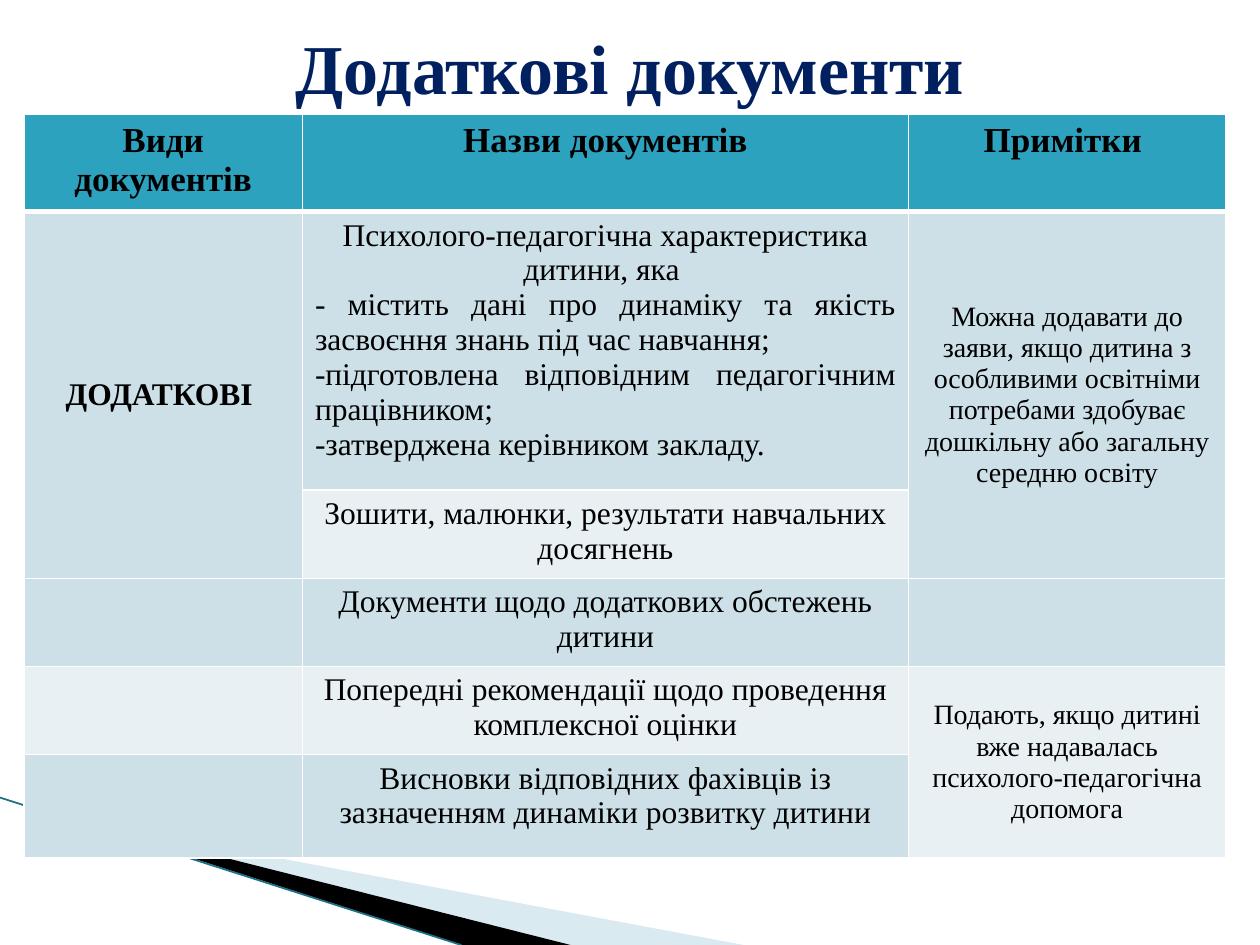
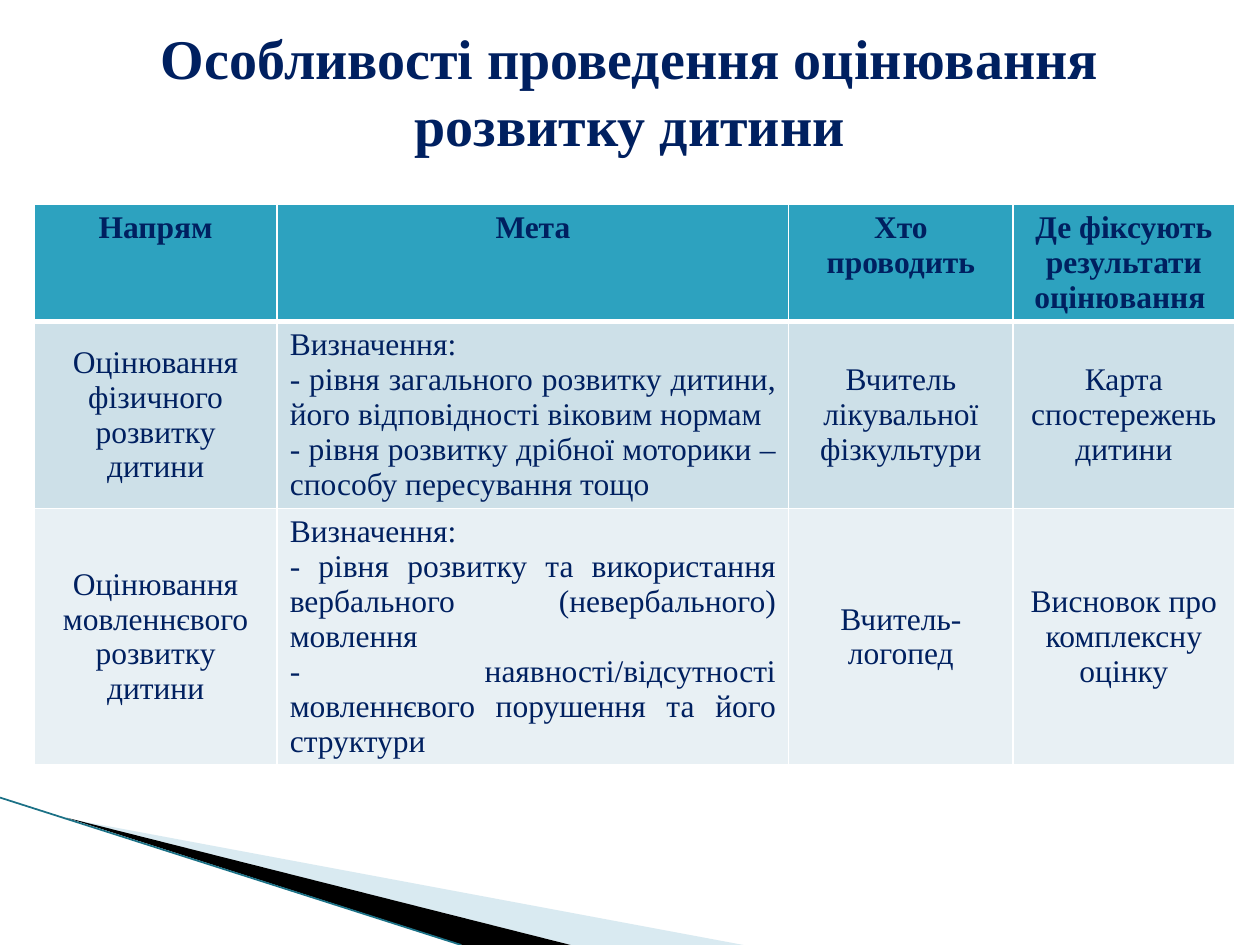
"""Build two slides on a child's extra documents and assessment."""
import pptx
import pptx.util
import pptx.dml.color
import pptx.enum.text
import pptx.enum.shapes
import pptx.oxml
import pptx.oxml.ns
from dataclasses import dataclass


@dataclass(frozen=True)
class Theme:
    font: str = "Times New Roman"
    navy: str = "002060"
    black: str = "000000"
    white: str = "FFFFFF"
    head: str = "2DA2BF"
    bands: tuple = ("CDE0E8", "E8F0F4")
    sheen: str = "A0CBDC"
    edge: str = "1B7186"
    big: int = 40
    large: int = 32
    label: int = 20
    body: int = 18
    small: int = 16


T = Theme()
WIDE, HIGH = 10, 7.5
DASH = "*"

DOCS = dict(
    title="Додаткові документи", size=T.big, tall=0.79,
    left=0.19, top=0.91, ink=T.black, label=T.label,
    cols=(2.21, 4.81, 2.52), rows=(0.77, 2.21, 0.7, 0.7, 0.7, 0.82),
    cells=[
        ["Види документів", "Назви документів", "Примітки "],
        ["ДОДАТКОВІ ",
         ["Психолого-педагогічна характеристика дитини, яка ",
          "- містить дані про динаміку та якість засвоєння знань під час навчання;",
          "*підготовлена відповідним педагогічним працівником;",
          "*затверджена керівником закладу."],
         "Можна додавати до заяви, якщо дитина з особливими освітніми "
         "потребами здобуває дошкільну або загальну середню освіту"],
        ["", "Зошити, малюнки, результати навчальних досягнень", ""],
        ["", "Документи щодо додаткових обстежень дитини", ""],
        ["", "Попередні рекомендації щодо проведення комплексної оцінки",
         "Подають, якщо дитині вже надавалась психолого-педагогічна допомога"],
        ["", "Висновки відповідних фахівців із зазначенням динаміки розвитку дитини", ""],
    ],
    spans=[(1, 0), (1, 2), (4, 2)], bands=(0, 1, 0, 1, 0),
    bold=(True, False, False), sizes=(T.body, T.body, T.small), lead="c",
)

TESTS = dict(
    title="Особливості проведення оцінювання розвитку дитини", size=T.large, tall=1.18,
    left=0.27, top=1.62, ink=T.navy, label=T.body,
    cols=(1.93, 4.06, 1.78, 1.76), rows=(0.92, 1.48, 2.03),
    cells=[
        ["Напрям", "Мета", "Хто проводить", "Де фіксують результати оцінювання "],
        ["Оцінювання фізичного розвитку дитини",
         ["Визначення:",
          "* рівня загального розвитку дитини, його відповідності віковим нормам",
          "* рівня розвитку дрібної моторики – способу пересування тощо"],
         "Вчитель лікувальної фізкультури", "Карта спостережень дитини"],
        ["Оцінювання мовленнєвого розвитку дитини",
         ["Визначення:",
          "* рівня розвитку та використання вербального (невербального) мовлення",
          "* наявності/відсутності мовленнєвого порушення та його структури"],
         "Вчитель-логопед", "Висновок про комплексну оцінку"],
    ],
    spans=[], bands=(0, 1),
    bold=(False,) * 4, sizes=(T.body,) * 4, lead="j",
)

WEDGES = [
    (T.sheen, 40, [(0.55, 6.5), (5.9, HIGH), (4.53, HIGH)]),
    (T.black, 100, [(0.53, 6.49), (4.53, HIGH), (3.67, HIGH)]),
]
RIM = (0, 6.33, 3.66, HIGH)
MIDDLE = pptx.enum.text.MSO_ANCHOR.MIDDLE


def inch(num):
    return pptx.util.Inches(num)


def tint(code):
    return pptx.dml.color.RGBColor.from_string(code)


def node(base, tag, **marks):
    item = pptx.oxml.parse_xml(f"<{tag} {pptx.oxml.ns.nsdecls('a')}/>")
    for key, mark in marks.items():
        item.set(key, str(mark))
    base.append(item)
    return item


def write(frame, text, size=T.body, ink=T.navy, bold=False, lead="c", rest="j"):
    """Fill a text frame; a leading star marks a dash bullet."""
    align = pptx.enum.text.PP_ALIGN
    sides = {"c": align.CENTER, "j": align.JUSTIFY}
    for rank, line in enumerate([text] if isinstance(text, str) else text):
        para = frame.add_paragraph() if rank else frame.paragraphs[0]
        para.alignment = sides[rest if rank else lead]
        if line.startswith(DASH):
            props = para._p.get_or_add_pPr()
            props.set("marL", "0")
            props.set("indent", "0")
            node(props, "a:buFont", typeface=T.font)
            node(props, "a:buChar", char="-")
        font = para.font
        if line:
            run = para.add_run()
            run.text = line.removeprefix(DASH)
            font = run.font
        font.name, font.size, font.bold = T.font, pptx.util.Pt(size), bold
        font.color.rgb = tint(ink)


def paint(cell, fill, base):
    """Give a cell its fill and white rules."""
    props = cell._tc.get_or_add_tcPr()
    for side in "LRTB":
        width = pptx.util.Pt(base if side == "B" else 1)
        rule = node(props, f"a:ln{side}", w=int(width))
        node(node(rule, "a:solidFill"), "a:srgbClr", val=T.white)
    cell.fill.solid()
    cell.fill.fore_color.rgb = tint(fill)


def adorn(slide):
    """Draw the corner wedges and their rim."""
    for shade, alpha, spots in WEDGES:
        first, *others = [(inch(x), inch(y)) for x, y in spots]
        pen = slide.shapes.build_freeform(*first)
        pen.add_line_segments(others, close=True)
        wedge = pen.convert_to_shape()
        wedge.shadow.inherit = False
        wedge.fill.solid()
        wedge.fill.fore_color.rgb = tint(shade)
        wedge.line.fill.background()
        if alpha < 100:
            color = next(wedge._element.spPr.iter(pptx.oxml.ns.qn("a:srgbClr")))
            node(color, "a:alpha", val=alpha * 1000)
    rim = slide.shapes.add_connector(
        pptx.enum.shapes.MSO_CONNECTOR.STRAIGHT, *map(inch, RIM))
    rim.line.color.rgb = tint(T.edge)
    rim.line.width = pptx.util.Pt(1)
    node(rim._element.spPr, "a:effectLst")


def grid(slide, page):
    """Lay out the table of a page."""
    cols, rows = page["cols"], page["rows"]
    table = slide.shapes.add_table(
        len(rows), len(cols), inch(page["left"]), inch(page["top"]),
        inch(sum(cols)), inch(sum(rows))).table
    table.first_row = table.horz_banding = False
    for col, width in zip(table.columns, cols):
        col.width = inch(width)
    for row, height in zip(table.rows, rows):
        row.height = inch(height)
    for r, line in enumerate(page["cells"]):
        for c, text in enumerate(line):
            cell = table.cell(r, c)
            top = r == 0
            paint(cell, T.head if top else T.bands[page["bands"][r - 1]], 3 if top else 1)
            write(cell.text_frame, text, ink=page["ink"],
                  size=page["label"] if top else page["sizes"][c],
                  bold=top or page["bold"][c],
                  lead="c" if isinstance(text, str) else page["lead"])
            if not top and c != 1:
                cell.vertical_anchor = MIDDLE
    for r, c in page["spans"]:
        table.cell(r, c).merge(table.cell(r + 1, c))


def build(deck, page):
    slide = deck.slides.add_slide(deck.slide_layouts[6])
    adorn(slide)
    grid(slide, page)
    frame = slide.shapes.add_textbox(
        inch(WIDE * 0.05), inch(0.13), inch(WIDE * 0.9), inch(page["tall"])).text_frame
    frame.word_wrap = True
    frame.vertical_anchor = MIDDLE
    write(frame, page["title"], size=page["size"], bold=True)


def main():
    deck = pptx.Presentation()
    deck.slide_width, deck.slide_height = inch(WIDE), inch(HIGH)
    for page in (DOCS, TESTS):
        build(deck, page)
    deck.save("out.pptx")


if __name__ == "__main__":
    main()
